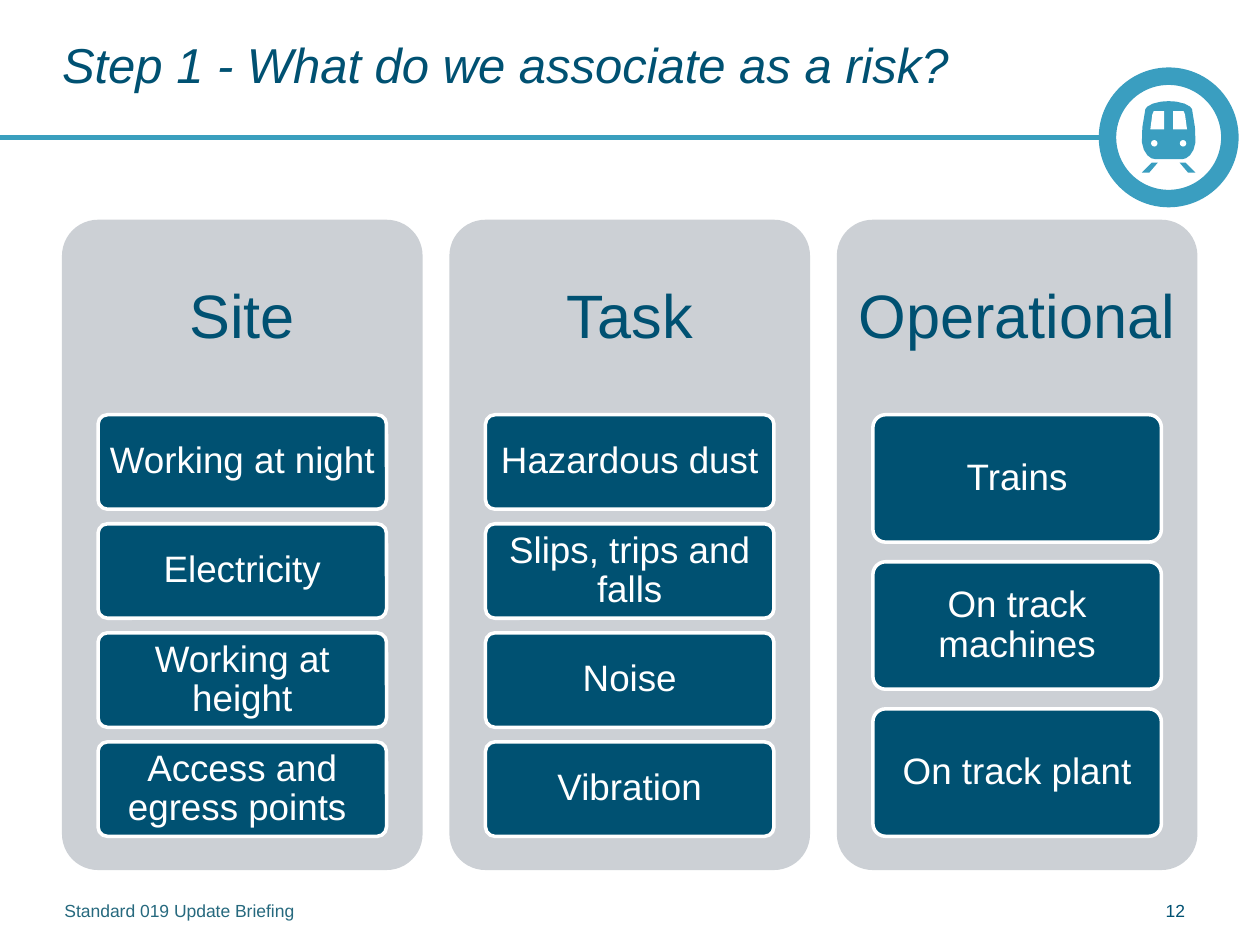
from dataclasses import dataclass

import pptx
import pptx.dml.color
import pptx.enum.shapes
import pptx.enum.text
import pptx.oxml.ns
import pptx.util
from lxml import etree

Cm = pptx.util.Cm
Pt = pptx.util.Pt
Shapes = pptx.enum.shapes.MSO_SHAPE
Align = pptx.enum.text.PP_ALIGN
Anchor = pptx.enum.text.MSO_ANCHOR

NAVY, SKY, GREY, WHITE, TEAL = "005172", "3A9EC0", "CCD0D5", "FFFFFF", "26697E"

# Column grid, in centimetres
COLUMN_LEFT, COLUMN_TOP, COLUMN_WIDTH, COLUMN_HEIGHT = 1.25, 4.43, 7.27, 13.11
COLUMN_PITCH = 7.81
STACK_TOP, STACK_HEIGHT = 8.36, 8.5
GAP_RATIO = 2 / 13  # gap between boxes, relative to box height

# Train badge, in centimetres; outlines are the right half, around the centre
BADGE_X, BADGE_Y, BADGE_SIZE = 23.56, 2.77, 2.82
BODY_HALF = [(0, -0.73), (0.15, -0.72), (0.32, -0.68), (0.43, -0.62),
             (0.47, -0.57), (0.53, -0.2), (0.54, 0.1), (0.5, 0.25),
             (0.43, 0.36), (0.35, 0.42), (0.27, 0.44), (0, 0.44)]
WINDOW = [(0.09, -0.53), (0.3, -0.53), (0.33, -0.46), (0.37, -0.16), (0.09, -0.16)]
RAIL = [(0.22, 0.51), (0.34, 0.51), (0.54, 0.71), (0.39, 0.71)]
LIGHT_X, LIGHT_Y, LIGHT_SIZE = 0.29, 0.12, 0.13


@dataclass
class Column:
    heading: str
    risks: list[str]


@dataclass
class Style:
    size: float
    color: str
    align: Align = Align.LEFT
    anchor: Anchor = Anchor.TOP
    spacing: float = 1.0
    italic: bool = False


HEADING = Style(35, NAVY, Align.CENTER, Anchor.MIDDLE, 0.9)
RISK = Style(21, WHITE, Align.CENTER, Anchor.MIDDLE, 0.9)
TITLE = Style(28, NAVY, anchor=Anchor.MIDDLE, spacing=0.85, italic=True)

COLUMNS = [
    Column("Site", ["Working at night", "Electricity", "Working at height",
                    "Access and egress points "]),
    Column("Task", ["Hazardous dust", "Slips, trips and falls", "Noise", "Vibration"]),
    Column("Operational", ["Trains", "On track machines", "On track plant"]),
]


def rgb(value: str) -> pptx.dml.color.RGBColor:
    return pptx.dml.color.RGBColor.from_string(value)


def write(shape, text: str, style: Style, margins=(0, 0, 0, 0)) -> None:
    """Write one paragraph; margins are left, top, right, bottom in cm."""
    frame = shape.text_frame
    frame.word_wrap = True
    frame.auto_size = pptx.enum.text.MSO_AUTO_SIZE.NONE
    frame.vertical_anchor = style.anchor
    (frame.margin_left, frame.margin_top,
     frame.margin_right, frame.margin_bottom) = map(Cm, margins)
    paragraph = frame.paragraphs[0]
    paragraph.alignment = style.align
    paragraph.line_spacing = style.spacing
    run = paragraph.add_run()
    run.text = text
    run.font.name = "Arial"
    run.font.size = Pt(style.size)
    run.font.italic = style.italic
    run.font.color.rgb = rgb(style.color)


def paint(shape, fill: str, line: str | None = None) -> None:
    shape.shadow.inherit = False
    shape.fill.solid()
    shape.fill.fore_color.rgb = rgb(fill)
    if line:
        shape.line.color.rgb = rgb(line)
        shape.line.width = Pt(2)
    else:
        shape.line.fill.background()


def add_preset(slide, kind: Shapes, left: float, top: float, width: float,
               height: float, fill: str, line: str | None = None):
    shape = slide.shapes.add_shape(kind, Cm(left), Cm(top), Cm(width), Cm(height))
    paint(shape, fill, line)
    return shape


def add_outline(slide, points: list[tuple[float, float]], fill: str) -> None:
    corners = [(Cm(BADGE_X + x), Cm(BADGE_Y + y)) for x, y in points]
    builder = slide.shapes.build_freeform(*corners[0])
    builder.add_line_segments(corners[1:], close=True)
    paint(builder.convert_to_shape(), fill)


def mirror(points: list[tuple[float, float]]) -> list[tuple[float, float]]:
    return [(-x, y) for x, y in points]


def add_label(slide, text: str, left: float, width: float, color: str) -> None:
    box = slide.shapes.add_textbox(Cm(left), Cm(18.14), Cm(width), Cm(0.61))
    write(box, text, Style(10, color))


def add_badge(slide) -> None:
    # Rule running into the ring
    rule = slide.shapes.add_connector(pptx.enum.shapes.MSO_CONNECTOR.STRAIGHT,
                                      Cm(0), Cm(BADGE_Y), Cm(22.3), Cm(BADGE_Y))
    rule.line.color.rgb = rgb("3A9FBE")
    rule.line.width = Pt(3)
    etree.SubElement(rule._element.spPr, pptx.oxml.ns.qn("a:effectLst"))
    ring = add_preset(slide, Shapes.DONUT, BADGE_X - BADGE_SIZE / 2,
                      BADGE_Y - BADGE_SIZE / 2, BADGE_SIZE, BADGE_SIZE, SKY)
    ring.adjustments[0] = 0.125

    # Train
    add_outline(slide, BODY_HALF + mirror(BODY_HALF[-2:0:-1]), SKY)
    for outline, fill in ((RAIL, SKY), (WINDOW, WHITE)):
        add_outline(slide, outline, fill)
        add_outline(slide, mirror(outline), fill)
    for x in (-LIGHT_X, LIGHT_X):
        add_preset(slide, Shapes.OVAL, BADGE_X + x - LIGHT_SIZE / 2,
                   BADGE_Y + LIGHT_Y - LIGHT_SIZE / 2, LIGHT_SIZE, LIGHT_SIZE, WHITE)


def add_column(slide, column: Column, left: float) -> None:
    panel = add_preset(slide, Shapes.ROUNDED_RECTANGLE, left, COLUMN_TOP,
                       COLUMN_WIDTH, COLUMN_HEIGHT, GREY)
    panel.adjustments[0] = 0.1
    write(panel, column.heading, HEADING, (0.17, 0.17, 0.17, 9.31))

    # Boxes share the stack height evenly
    count = len(column.risks)
    height = STACK_HEIGHT / (count + (count - 1) * GAP_RATIO)
    for row, risk in enumerate(column.risks):
        box = add_preset(slide, Shapes.ROUNDED_RECTANGLE, left + COLUMN_WIDTH * 0.1,
                         STACK_TOP + row * height * (1 + GAP_RATIO),
                         COLUMN_WIDTH * 0.8, height, NAVY, WHITE)
        box.adjustments[0] = 0.1
        write(box, risk, RISK, (0.15, 0.12, 0.15, 0.12))


def main() -> None:
    presentation = pptx.Presentation()
    presentation.slide_width, presentation.slide_height = Cm(25.4), Cm(19.05)
    slide = presentation.slides.add_slide(presentation.slide_layouts[5])

    add_badge(slide)

    # Title
    title = slide.shapes.title
    title.left, title.top, title.width, title.height = map(Cm, (1.25, 0.5, 20.12, 1.78))
    write(title, "Step 1 - What do we associate as a risk?", TITLE)

    # Risk columns
    for index, column in enumerate(COLUMNS):
        add_column(slide, column, COLUMN_LEFT + index * COLUMN_PITCH)

    # Footer
    add_label(slide, "12", 23.5, 1.24, NAVY)
    add_label(slide, "Standard 019 Update Briefing", 1.3, 21.97, TEAL)

    presentation.save("out.pptx")


if __name__ == "__main__":
    main()
